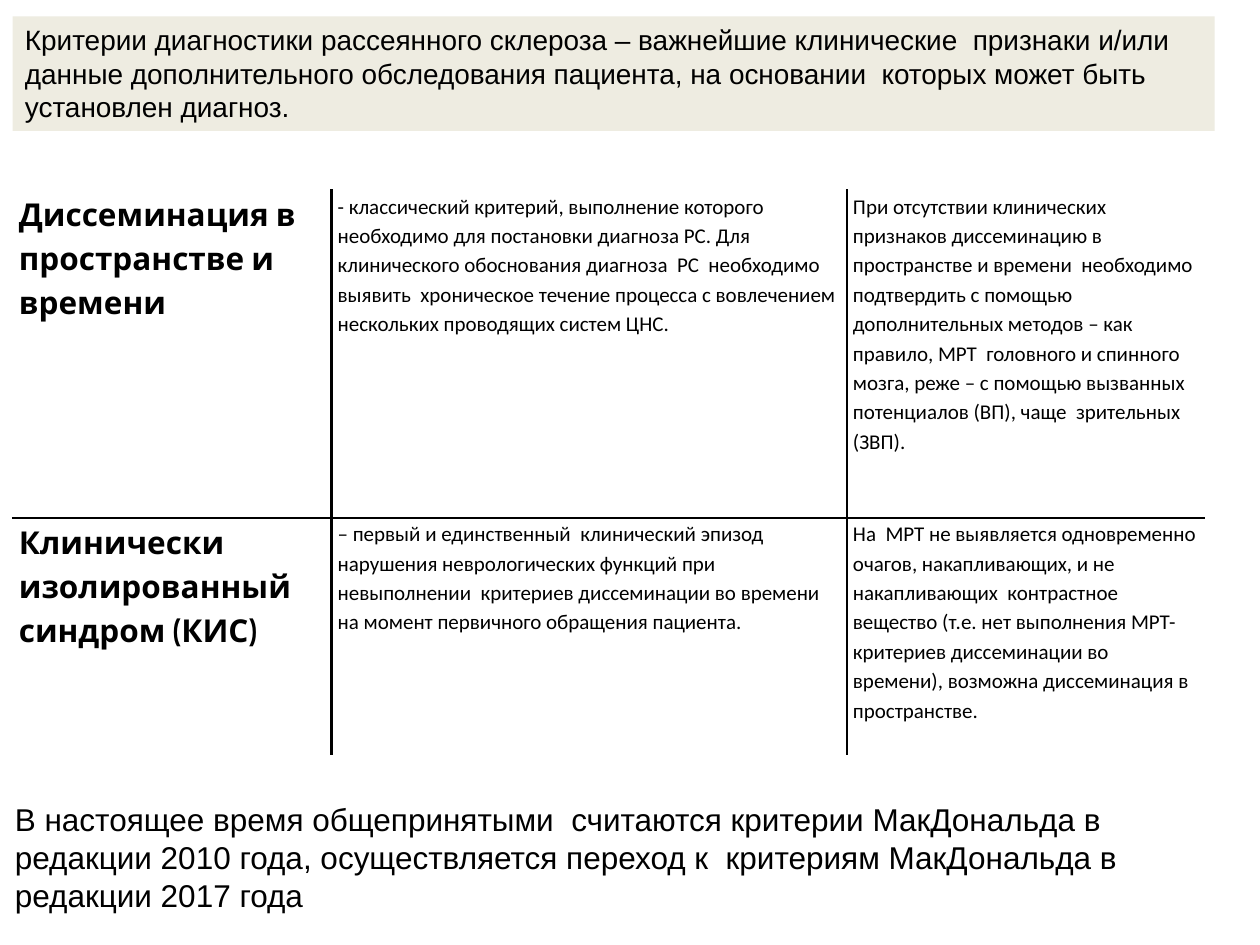
"""Builds a slide on the diagnostic criteria of multiple sclerosis."""
from lxml.etree import SubElement
from pptx import Presentation
from pptx.dml.color import RGBColor
from pptx.enum.shapes import MSO_SHAPE
from pptx.enum.text import MSO_ANCHOR, PP_ALIGN
from pptx.oxml.ns import qn
from pptx.util import Inches, Pt

BLACK = RGBColor(0, 0, 0)
WHITE = RGBColor(255, 255, 255)
CREAM = RGBColor(0xEE, 0xEC, 0xE1)

INTRO = (
    "Критерии диагностики рассеянного склероза – важнейшие клинические  признаки и/или "
    "данные дополнительного обследования пациента, на основании  которых может быть "
    "установлен диагноз."
)
ROWS = [
    (
        "Диссеминация в пространстве и времени",
        "- классический критерий, выполнение которого необходимо для постановки диагноза РС. "
        "Для клинического обоснования диагноза  РС  необходимо  выявить  хроническое течение "
        "процесса с вовлечением нескольких проводящих систем ЦНС.",
        "При отсутствии клинических признаков диссеминацию в пространстве и времени  необходимо "
        "подтвердить с помощью дополнительных методов – как правило, МРТ  головного и спинного "
        "мозга, реже – с помощью вызванных потенциалов (ВП), чаще  зрительных (ЗВП).",
    ),
    (
        "Клинически изолированный синдром (КИС)",
        "– первый и единственный  клинический эпизод нарушения неврологических функций при "
        "невыполнении  критериев диссеминации во времени на момент первичного обращения пациента.",
        "На  МРТ не выявляется одновременно очагов, накапливающих, и не накапливающих  "
        "контрастное вещество (т.е. нет выполнения МРТ-критериев диссеминации во  времени), "
        "возможна диссеминация в пространстве.",
    ),
]
CLOSING = (
    "В настоящее время общепринятыми  считаются критерии МакДональда в редакции 2010 года, "
    "осуществляется переход к  критериям МакДональда в редакции 2017 года"
)
WIDTHS = [2.53, 4.09, 2.84]
HEIGHTS = [2.6, 1.89]
LEFT, WIDE = 0.1, 9.54


def write(frame, text, size, font, bold=False, gap=None):
    frame.word_wrap = True
    par = frame.paragraphs[0]
    par.alignment = PP_ALIGN.LEFT
    if gap:
        par.line_spacing = gap
    run = par.add_run()
    run.text = text
    run.font.size = Pt(size)
    run.font.name = font
    run.font.bold = bold
    run.font.color.rgb = BLACK


def edge(cell, side, inner, width):
    line = SubElement(cell._tc.get_or_add_tcPr(), qn(f"a:ln{side}"), w=str(Pt(width if inner else 1)))
    fill = SubElement(line, qn("a:solidFill"))
    SubElement(fill, qn("a:srgbClr"), val=str(BLACK if inner else WHITE))


def fill_cell(cell, text, row, col):
    cell.margin_left = cell.margin_right = Inches(0.05)
    cell.margin_top = cell.margin_bottom = 0
    edge(cell, "L", col > 0, 1.5)
    edge(cell, "R", col < len(WIDTHS) - 1, 1.5)
    edge(cell, "T", row > 0, 1)
    edge(cell, "B", row < len(HEIGHTS) - 1, 1)
    cell.fill.background()
    head = col == 0
    write(cell.text_frame, text, 18 if head else 12, "Cabin" if head else "Calibri", head, 1.15)


def add_grid(slide):
    size = Inches(sum(WIDTHS)), Inches(sum(HEIGHTS))
    grid = slide.shapes.add_table(len(ROWS), len(WIDTHS), Inches(LEFT), Inches(1.51), *size).table
    grid.first_row = grid.horz_banding = False
    for col, width in zip(grid.columns, WIDTHS):
        col.width = Inches(width)
    for row, height in zip(grid.rows, HEIGHTS):
        row.height = Inches(height)
    for r, texts in enumerate(ROWS):
        for c, text in enumerate(texts):
            fill_cell(grid.cell(r, c), text, r, c)


def main():
    deck = Presentation()
    deck.slide_width, deck.slide_height = Inches(10), Inches(7.5)
    slide = deck.slides.add_slide(deck.slide_layouts[6])

    band = slide.shapes.add_shape(
        MSO_SHAPE.RECTANGLE, Inches(LEFT), Inches(0.13), Inches(WIDE), Inches(0.91)
    )
    band.shadow.inherit = False
    band.fill.solid()
    band.fill.fore_color.rgb = CREAM
    band.line.fill.background()
    band.text_frame.vertical_anchor = MSO_ANCHOR.TOP
    write(band.text_frame, INTRO, 16, "Arial")

    add_grid(slide)

    note = slide.shapes.add_textbox(Inches(0.02), Inches(6.3), Inches(WIDE), Inches(0.71))
    write(note.text_frame, CLOSING, 18, "Arial")

    deck.save("out.pptx")


if __name__ == "__main__":
    main()
